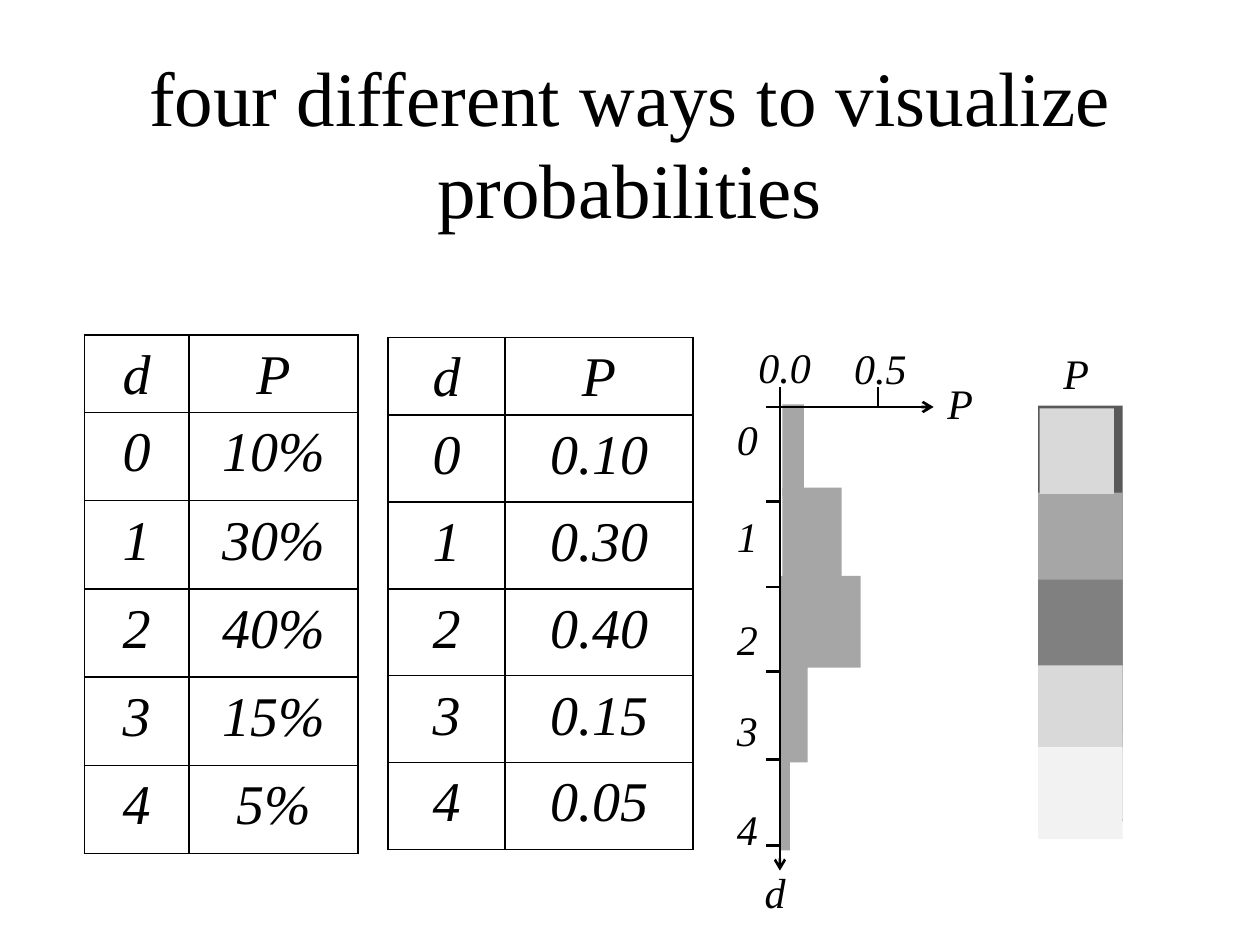
from lxml import etree
from pptx import Presentation
from pptx import util as u
from pptx.dml.color import RGBColor
from pptx.enum import shapes, text
from pptx.oxml import ns

Inches = u.Inches
FONT = "Times New Roman"
COLORS = {
    "ink": "000000",
    "bar": "A6A6A6",
    "very_dark": "595959",
    "dark": "808080",
    "medium": "A6A6A6",
    "light": "D9D9D9",
    "very_light": "F2F2F2",
}


def color(name):
    return RGBColor.from_string(COLORS[name])


def add_run(paragraph, words, size, italic=True):
    run = paragraph.add_run()
    run.text = words
    run.font.name = FONT
    run.font.size = u.Pt(size)
    run.font.italic = italic
    run.font.color.rgb = color("ink")


def add_label(slide, words, left, top, width):
    label = slide.shapes.add_textbox(Inches(left), Inches(top), Inches(width), Inches(0.5))
    label.text_frame.word_wrap = True
    label.text_frame.auto_size = text.MSO_AUTO_SIZE.SHAPE_TO_FIT_TEXT
    add_run(label.text_frame.paragraphs[0], words, 24)


def add_block(container, fill, left, top, width, height):
    block = container.shapes.add_shape(
        shapes.MSO_SHAPE.RECTANGLE, Inches(left), Inches(top), Inches(width), Inches(height))
    block.shadow.inherit = False
    block.fill.solid()
    block.fill.fore_color.rgb = color(fill)
    block.line.fill.background()


def add_line(container, start_x, start_y, end_x, end_y, arrow=False):
    line = container.shapes.add_connector(
        shapes.MSO_CONNECTOR.STRAIGHT,
        Inches(start_x), Inches(start_y), Inches(end_x), Inches(end_y))
    line.line.color.rgb = color("ink")
    line.line.width = u.Pt(1.5)
    if arrow:
        etree.SubElement(line.line._get_or_add_ln(), ns.qn("a:tailEnd"), type="arrow")
    etree.SubElement(line._element.spPr, ns.qn("a:effectLst"))


def add_borders(cell):
    properties = cell._tc.get_or_add_tcPr()
    for index, side in enumerate(("lnL", "lnR", "lnT", "lnB")):
        border = etree.Element(ns.qn(f"a:{side}"), w=str(u.Pt(1)))
        fill = etree.SubElement(border, ns.qn("a:solidFill"))
        etree.SubElement(fill, ns.qn("a:srgbClr"), val=COLORS["ink"])
        properties.insert(index, border)


def add_title(slide, left, top, width, height):
    title = slide.shapes.add_textbox(Inches(left), Inches(top), Inches(width), Inches(height))
    title.text_frame.word_wrap = True
    title.text_frame.vertical_anchor = text.MSO_ANCHOR.MIDDLE
    paragraph = title.text_frame.paragraphs[0]
    paragraph.alignment = text.PP_ALIGN.CENTER
    add_run(paragraph, "four different ways to visualize probabilities", 44, italic=False)


def add_probability_table(slide, probabilities, left, top, column_widths, row_height):
    header_height = 0.61
    rows = [("d", "P")] + [(str(d), value) for d, value in enumerate(probabilities)]
    height = header_height + row_height * len(probabilities)
    frame = slide.shapes.add_table(
        len(rows), 2, Inches(left), Inches(top), Inches(sum(column_widths)), Inches(height))
    table = frame.table
    table.first_row = table.horz_banding = False
    for column, width in zip(table.columns, column_widths):
        column.width = Inches(width)
    for row_index, values in enumerate(rows):
        table.rows[row_index].height = Inches(row_height if row_index else header_height)
        for column_index, value in enumerate(values):
            cell = table.cell(row_index, column_index)
            cell.margin_left = cell.margin_right = Inches(0.07)
            cell.margin_top = cell.margin_bottom = 0
            cell.fill.background()
            add_borders(cell)
            paragraph = cell.text_frame.paragraphs[0]
            paragraph.alignment = text.PP_ALIGN.CENTER
            paragraph.line_spacing = 1.15
            add_run(paragraph, value, 32)


def add_histogram(slide, left, top):
    axis_x, axis_y = left + 0.44, top + 0.57
    group = slide.shapes.add_group_shape()
    bars = [
        (0.02, -0.02, 0.17, 0.73),
        (0.02, 0.64, 0.47, 0.78),
        (0, 1.34, 0.64, 0.73),
        (0, 1.84, 0.22, 0.98),
        (0.01, 2.54, 0.07, 0.98),
    ]
    for x, y, width, height in bars:
        add_block(group, "bar", axis_x + x, axis_y + y, width, height)
    add_line(group, axis_x, axis_y - 0.16, axis_x, axis_y + 3.68, arrow=True)
    add_line(group, axis_x - 0.11, axis_y, axis_x + 1.22, axis_y, arrow=True)
    add_line(group, axis_x + 0.78, axis_y - 0.16, axis_x + 0.78, axis_y)
    for tick in (0.75, 1.43, 2.1, 2.8, 3.48):
        add_line(group, axis_x, axis_y + tick, axis_x - 0.11, axis_y + tick)

    add_label(slide, "0.0", left + 0.17, top, 0.98)
    add_label(slide, "0.5", left + 0.93, top + 0.01, 0.66)
    for d, offset in enumerate((0.57, 1.34, 2.16, 2.88, 3.67)):
        add_label(slide, str(d), left, top + offset, 0.66)
    add_label(slide, "P", left + 1.67, top + 0.29, 0.5)
    add_label(slide, "d", left + 0.22, top + 4.17, 0.66)


def add_shaded_column(slide, left, top, width):
    bands = [
        ("very_dark", 0.51, 3.3),
        ("medium", 1.2, 2.59),
        ("dark", 1.89, 1.22),
        ("light", 2.57, 1.22),
        ("very_light", 3.22, 0.73),
    ]
    for shade, offset, height in bands:
        add_block(slide, shade, left, top + offset, width, height)
    add_block(slide, "light", left + 0.01, top + 0.53, 0.59, 0.68)
    add_label(slide, "P", left + 0.1, top, 0.42)


def main():
    presentation = Presentation()
    presentation.slide_width = Inches(10)
    presentation.slide_height = Inches(7.5)
    slide = presentation.slides.add_slide(presentation.slide_layouts[6])
    probabilities = (10, 30, 40, 15, 5)
    percentages = [f"{value}%" for value in probabilities]
    decimals = [f"{value / 100:.2f}" for value in probabilities]

    add_title(slide, 0, 0.5, 10, 1.25)
    add_probability_table(slide, percentages, 0.67, 2.66, (0.83, 1.34), 0.7)
    add_probability_table(slide, decimals, 3.08, 2.68, (0.93, 1.49), 0.69)
    add_histogram(slide, 5.75, 2.66)
    add_shaded_column(slide, 8.24, 2.71, 0.67)
    presentation.save("out.pptx")


if __name__ == "__main__":
    main()
